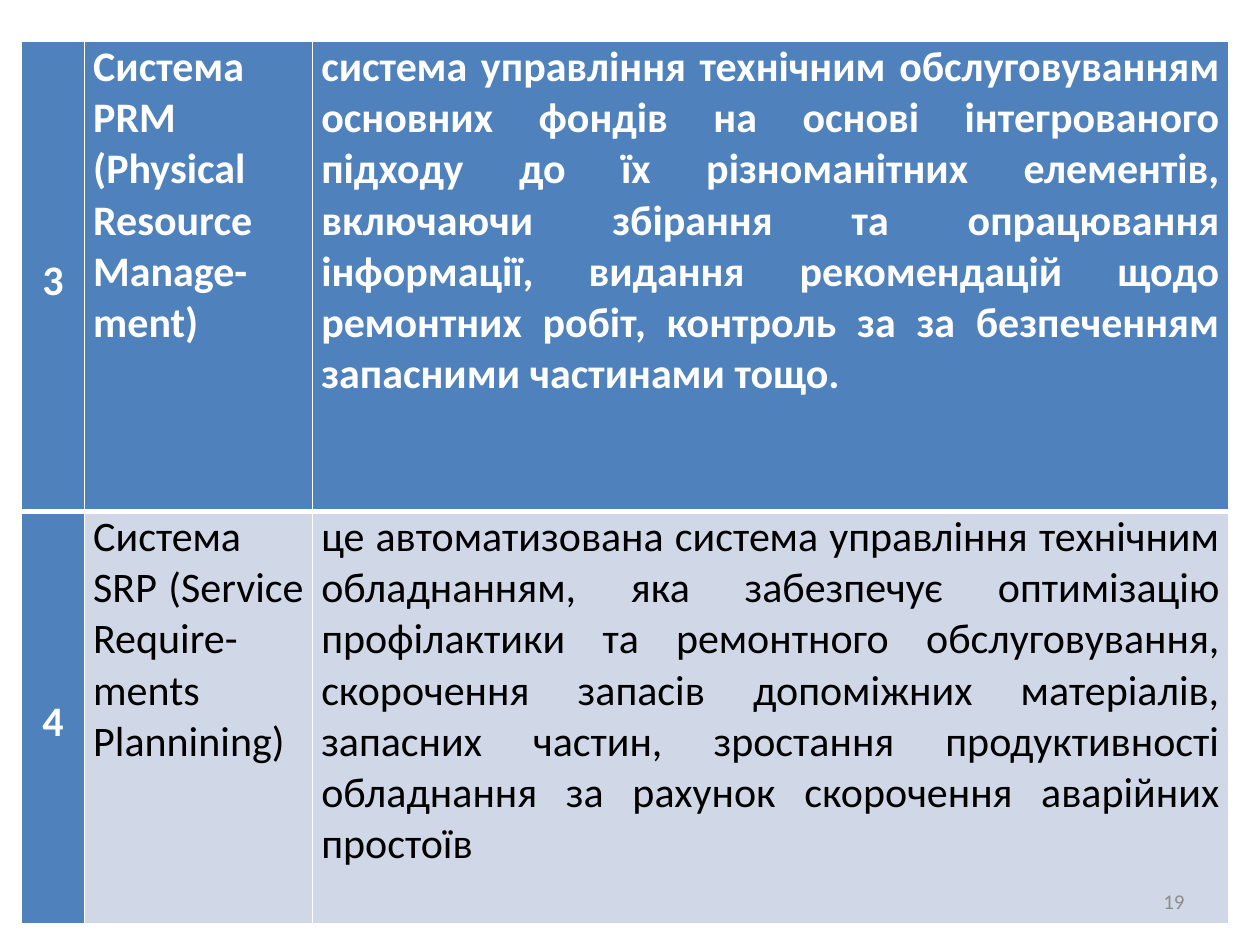
"""Build a slide with a table of two maintenance management systems."""
from lxml.etree import SubElement
from pptx import Presentation
from pptx.dml.color import RGBColor
from pptx.enum.text import MSO_ANCHOR, PP_ALIGN
from pptx.oxml.ns import qn
from pptx.util import Inches, Pt

ROWS = [
    ("3", "Система PRM (Physical Resource Manаge-ment)",
     "система управління технічним обслуговуванням основних фондів на основі "
     "інтегрованого підходу до їх різноманітних елементів, включаючи збірання "
     "та опрацювання інформації, видання рекомендацій щодо ремонтних робіт, "
     "контроль за за безпеченням запасними частинами тощо."),
    ("4", "Система SRP (Service Require-ments Plannining)",
     "це автоматизована система управління технічним обладнанням, яка "
     "забезпечує оптимізацію профілактики та ремонтного обслуговування, "
     "скорочення запасів допоміжних матеріалів, запасних частин, зростання "
     "продуктивності обладнання за рахунок скорочення аварійних простоїв"),
]
PAGE = "19"
WIDTHS = [0.5, 1.81, 7.27]
HEIGHTS = [3.73, 3.27]
THEME = {"font": "Calibri", "body": 24, "small": 12, "head": "4F81BD",
         "pale": "D0D8E8", "light": "FFFFFF", "dark": "000000", "gray": "8C8C8C"}


def write(frame, text, size="body", color="dark", bold=False,
          align=PP_ALIGN.JUSTIFY, space=None):
    para = frame.paragraphs[0]
    para.alignment = align
    if space:
        para.line_spacing = space
    run = para.add_run()
    run.text = text
    font = run.font
    font.name, font.size, font.bold = THEME["font"], Pt(THEME[size]), bold
    font.color.rgb = RGBColor.from_string(THEME[color])


def edge(cell, **sides):
    props = cell._tc.get_or_add_tcPr()
    for spot, (side, width) in enumerate(sides.items()):
        line = SubElement(props, qn(f"a:ln{side}"), w=str(Pt(width)))
        fill = SubElement(line, qn("a:solidFill"))
        SubElement(fill, qn("a:srgbClr"), val=THEME["light"])
        props.insert(spot, line)


def style(cell, text, top, first):
    head = top or first
    cell.fill.solid()
    cell.fill.fore_color.rgb = RGBColor.from_string(THEME["head" if head else "pale"])
    cell.margin_left = cell.margin_right = Inches(0.07)
    cell.margin_top = cell.margin_bottom = 0
    cell.vertical_anchor = MSO_ANCHOR.MIDDLE if first else MSO_ANCHOR.TOP
    write(cell.text_frame, text, color="light" if head else "dark", bold=head,
          align=PP_ALIGN.CENTER if first else PP_ALIGN.JUSTIFY,
          space=1.2 if first else None)
    edge(cell, L=1, R=1, T=1 if top else 3, B=3 if top else 1)


def main():
    deck = Presentation()
    deck.slide_width, deck.slide_height = Inches(10), Inches(7.5)
    slide = deck.slides.add_slide(deck.slide_layouts[6])
    table = slide.shapes.add_table(
        len(ROWS), len(WIDTHS), Inches(0.17), Inches(0.33),
        Inches(sum(WIDTHS)), Inches(sum(HEIGHTS))).table
    for col, width in zip(table.columns, WIDTHS):
        col.width = Inches(width)
    for row, height in zip(table.rows, HEIGHTS):
        row.height = Inches(height)
    for r, texts in enumerate(ROWS):
        for c, text in enumerate(texts):
            style(table.cell(r, c), text, r == 0, c == 0)
    frame = slide.shapes.add_textbox(
        Inches(7.17), Inches(6.95), Inches(2.33), Inches(0.4)).text_frame
    frame.word_wrap = True
    frame.vertical_anchor = MSO_ANCHOR.MIDDLE
    write(frame, PAGE, size="small", color="gray", align=PP_ALIGN.RIGHT)
    deck.save("out.pptx")


if __name__ == "__main__":
    main()
